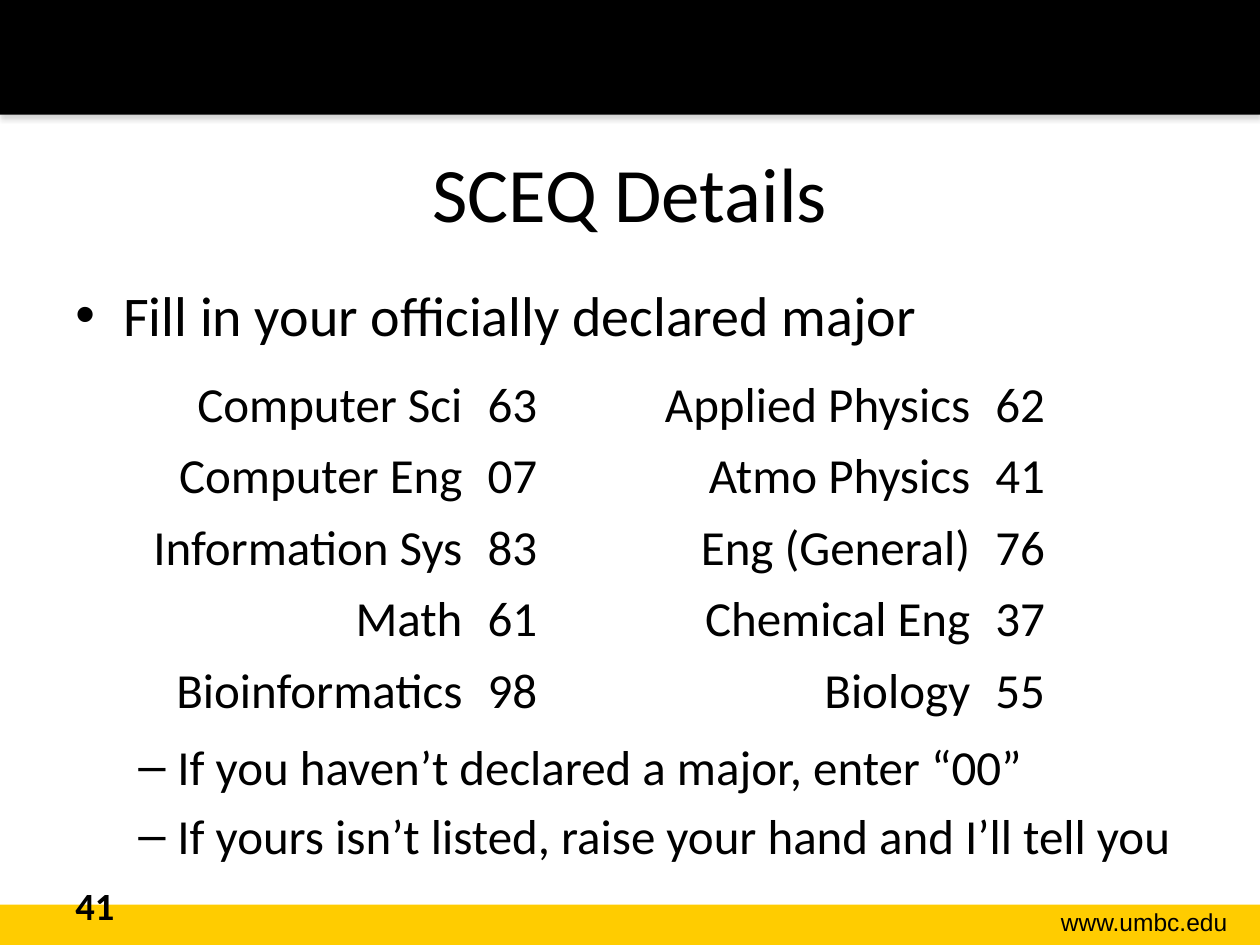
from lxml import etree
from pptx import Presentation
from pptx import util as u
from pptx.dml.color import RGBColor
from pptx.enum import shapes, text
from pptx.oxml import parse_xml
from pptx.oxml.ns import nsdecls, qn

COLORS = {"gold": "FFCC00", "black": "000000"}
RIGHT, CENTER, LEFT = text.PP_ALIGN.RIGHT, text.PP_ALIGN.CENTER, text.PP_ALIGN.LEFT

deck = Presentation()
deck.slide_width, deck.slide_height = u.Inches(10), u.Inches(7.5)
page = deck.slides.add_slide(deck.slide_layouts[6])


def style(para, size, align=LEFT, font="Calibri", bold=False):
    para.alignment = align
    for span in para.runs:
        span.font.size = u.Pt(size)
        span.font.name = font
        span.font.bold = bold
        span.font.color.rgb = RGBColor.from_string(COLORS["black"])


def add_box(left, top, width, height):
    box = page.shapes.add_textbox(*map(u.Inches, (left, top, width, height)))
    box.text_frame.word_wrap = True
    return box.text_frame


# Footer and header bars
for top, height, color in ((7.18, 0.32, "gold"), (0, 0.91, "black")):
    bar = page.shapes.add_shape(shapes.MSO_SHAPE.RECTANGLE, 0, u.Inches(top),
                                deck.slide_width, u.Inches(height))
    bar.shadow.inherit = False
    bar.fill.solid()
    bar.fill.fore_color.rgb = RGBColor.from_string(COLORS[color])
    bar.line.fill.background()

# The header, drawn last, casts a soft shadow downwards
effects = bar._element.spPr.find(qn("a:effectLst"))
effects.append(parse_xml(
    f'<a:outerShdw {nsdecls("a")} blurRad="{u.Pt(3.1)}" dist="{u.Pt(1.8)}" '
    'dir="5400000" rotWithShape="0"><a:srgbClr val="808080">'
    '<a:alpha val="35000"/></a:srgbClr></a:outerShdw>'))

# Web address, title and page number
address = add_box(7.85, 7.15, 1.99, 0.34)
address.text = "www.umbc.edu"
style(address.paragraphs[0], 14, RIGHT, font="Arial")

title = add_box(0.5, 0.9, 9, 1.25)
title.vertical_anchor = text.MSO_ANCHOR.MIDDLE
title.text = "SCEQ Details"
style(title.paragraphs[0], 44, CENTER)

number = add_box(0.5, 6.95, 2.33, 0.4)
number.text = "41"
style(number.paragraphs[0], 22, bold=True)

# Bulleted text; the second bullet leaves room for the table
bullets = (
    ("Fill in your officially declared major", "•", 32, 0, 0.38, 0.38),
    ("If you haven’t declared a major, enter “00”", "–", 28, 222, 0.81, 0.31),
    ("If yours isn’t listed, raise your hand and I’ll tell you", "–", 28, 5.6, 0.81, 0.31),
)
body = add_box(0.5, 2.18, 9, 4.55)
for index, (line, mark, size, before, margin, hanging) in enumerate(bullets):
    para = body.paragraphs[0] if index == 0 else body.add_paragraph()
    para.text = line
    para.space_before = u.Pt(before)
    properties = para._p.get_or_add_pPr()
    properties.set("marL", str(u.Inches(margin)))
    properties.set("indent", str(-u.Inches(hanging)))
    etree.SubElement(properties, qn("a:buFont")).set("typeface", "Arial")
    etree.SubElement(properties, qn("a:buChar")).set("char", mark)
    style(para, size)

# Majors and their codes
majors = (
    ("Computer Sci", "63", "Applied Physics", "62"),
    ("Computer Eng", "07", "Atmo Physics", "41"),
    ("Information Sys", "83", "Eng (General)", "76"),
    ("Math", "61", "Chemical Eng", "37"),
    ("Bioinformatics", "98", "Biology", "55"),
)
widths = (2.98, 1.23, 2.8, 1.41)
table = page.shapes.add_table(len(majors), len(widths), u.Inches(0.79), u.Inches(2.93),
                              u.Inches(sum(widths)), u.Inches(2.83)).table
table.first_row = table.horz_banding = False
for column, width in zip(table.columns, widths):
    column.width = u.Inches(width)
for row, entries in enumerate(majors):
    for column, entry in enumerate(entries):
        cell = table.cell(row, column)
        cell.fill.background()
        cell.text = entry
        style(cell.text_frame.paragraphs[0], 28, LEFT if column % 2 else RIGHT)

deck.save("out.pptx")
